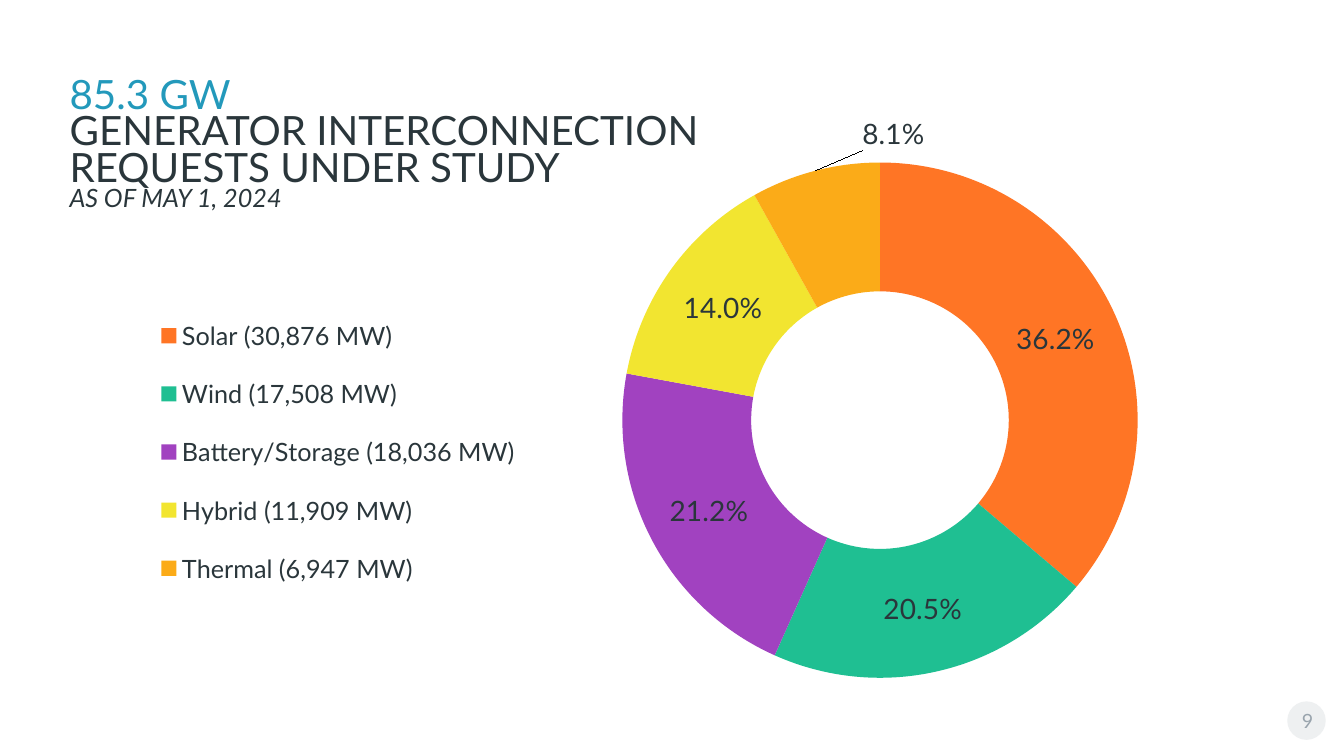
import copy

import pptx
import pptx.chart.data
import pptx.dml.color
import pptx.enum.chart
import pptx.enum.shapes
import pptx.enum.text
import pptx.oxml
import pptx.oxml.ns
import pptx.util

Pt = pptx.util.Pt
COLORS = {
    "ink": "2A363B",
    "accent": "2399BB",
    "badge": "EEF0F1",
    "page number": "99A4AD",
}
REQUESTS = [
    ("Solar (30,876 MW)", 0.362, "FF7525"),
    ("Wind (17,508 MW)", 0.205, "1FBF92"),
    ("Battery/Storage (18,036 MW)", 0.212, "A142C0"),
    ("Hybrid (11,909 MW)", 0.14, "F2E530"),
    ("Thermal (6,947 MW)", 0.081, "FBAB18"),
]
TITLE_LINES = [
    ("85.3 GW", 28.8, "accent", False),
    ("GENERATOR INTERCONNECTION REQUESTS UNDER STUDY", 28.8, "ink", False),
    ("AS OF MAY 1, 2024", 18, "ink", True),
]


def rgb(value):
    return pptx.dml.color.RGBColor.from_string(value)


def set_layout(parent, index, **settings):
    """Give a chart part a manual layout, as fractions of the chart."""
    for old_layout in parent.findall(pptx.oxml.ns.qn("c:layout")):
        parent.remove(old_layout)
    entries = "".join(f'<c:{key} val="{value}"/>' for key, value in settings.items())
    parent.insert(index, pptx.oxml.parse_xml(
        f'<c:layout {pptx.oxml.ns.nsdecls("c")}><c:manualLayout>{entries}'
        "</c:manualLayout></c:layout>"))


class SlideBuilder:
    def __init__(self, page, font_name):
        self.page = page
        self.font_name = font_name

    def style(self, font, size, color="ink", italic=False):
        font.name = self.font_name
        font.size = Pt(size)
        font.bold = False
        font.italic = italic
        font.color.rgb = rgb(COLORS[color])

    def title(self, lines, left, top, width, height):
        box = self.page.shapes.title
        box.left, box.top, box.width, box.height = map(Pt, (left, top, width, height))
        frame = box.text_frame
        frame.word_wrap = True
        frame.auto_size = pptx.enum.text.MSO_AUTO_SIZE.NONE
        frame.vertical_anchor = pptx.enum.text.MSO_ANCHOR.TOP
        para = frame.paragraphs[0]
        para.alignment = pptx.enum.text.PP_ALIGN.LEFT
        para.line_spacing = 0.75
        for number, (text, size, color, italic) in enumerate(lines, 1):
            span = para.add_run()
            span.text = text
            self.style(span.font, size, color, italic)
            if number < len(lines):
                para.add_line_break()
                # The break keeps the size of its line
                para._p[-1].append(copy.deepcopy(span._r.rPr))

    def badge(self, left, top, size):
        circle = self.page.shapes.add_shape(
            pptx.enum.shapes.MSO_SHAPE.OVAL, Pt(left), Pt(top), Pt(size), Pt(size))
        circle.shadow.inherit = False
        circle.fill.solid()
        circle.fill.fore_color.rgb = rgb(COLORS["badge"])
        circle.line.fill.background()

    def page_number(self, text, left, top, size):
        box = self.page.shapes.add_textbox(Pt(left), Pt(top), Pt(size), Pt(size))
        frame = box.text_frame
        frame.word_wrap = True
        frame.margin_left = frame.margin_right = Pt(2)
        frame.vertical_anchor = pptx.enum.text.MSO_ANCHOR.BOTTOM
        para = frame.paragraphs[0]
        para.alignment = pptx.enum.text.PP_ALIGN.CENTER
        span = para.add_run()
        span.text = text
        self.style(span.font, 14, "page number")

    def doughnut(self, slices, left, top, width, height):
        data = pptx.chart.data.CategoryChartData(number_format="0.0%")
        data.categories = [name for name, _, _ in slices]
        data.add_series("Series 1", [share for _, share, _ in slices])
        chart = self.page.shapes.add_chart(
            pptx.enum.chart.XL_CHART_TYPE.DOUGHNUT,
            Pt(left), Pt(top), Pt(width), Pt(height), data).chart
        self.style(chart.font, 13.5)
        chart.has_title = False
        set_layout(chart._chartSpace.chart.plotArea, 0, layoutTarget="inner",
                   xMode="edge", yMode="edge", x=0.464, y=0.121, w=0.415, h=0.826)

        chart.has_legend = True
        legend = chart.legend
        legend.position = pptx.enum.chart.XL_LEGEND_POSITION.LEFT
        legend.include_in_layout = False
        self.style(legend.font, 18)
        set_layout(legend._element, 1, xMode="edge", yMode="edge",
                   x=0.08, y=0.33, w=0.31, h=0.51)

        series = chart.plots[0].series[0]
        labels = series.data_labels
        labels.show_value = True
        labels.number_format = "0.0%"
        labels.number_format_is_linked = False
        self.style(labels.font, 20)
        for index, (_, _, color) in enumerate(slices):
            point = series.points[index]
            point.format.fill.solid()
            point.format.fill.fore_color.rgb = rgb(color)
            point.format.line.fill.background()

        # The smallest slice has its label outside the ring
        self.style(series.points[len(slices) - 1].data_label.font, 20)
        outer_label = labels._element.find(pptx.oxml.ns.qn("c:dLbl"))
        set_layout(outer_label, 1, x=0.05, y=-0.16)


def main():
    deck = pptx.Presentation()
    deck.slide_width, deck.slide_height = Pt(960), Pt(540)
    page = deck.slides.add_slide(deck.slide_layouts[5])
    builder = SlideBuilder(page, "Lato")
    builder.badge(919.5, 501, 27.5)
    builder.page_number("9", 919.5, 498, 29)
    builder.doughnut(REQUESTS, 33, 62, 887, 446)
    builder.title(TITLE_LINES, 42.5, 54, 528, 78)
    deck.save("out.pptx")


if __name__ == "__main__":
    main()
